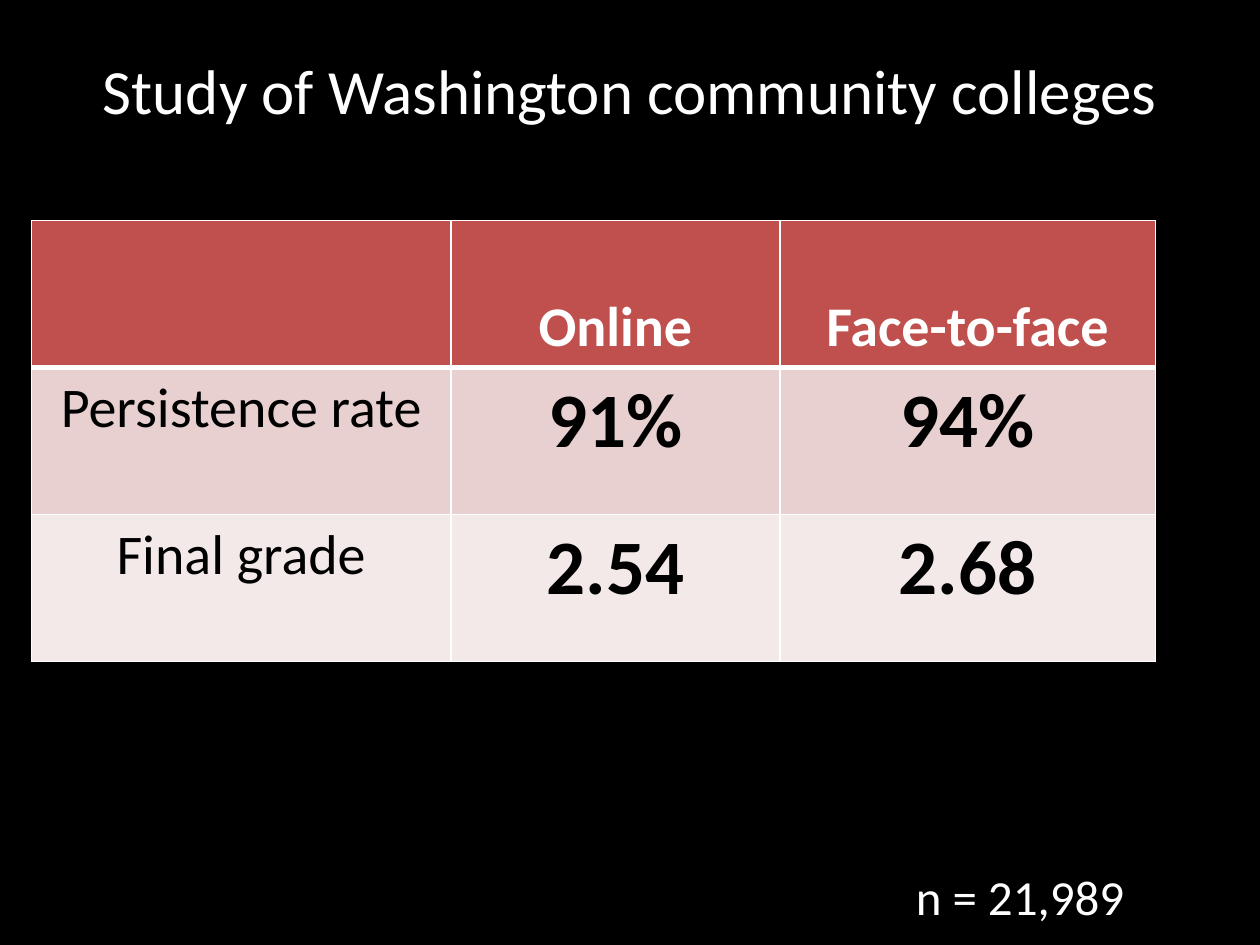
"""Build a slide comparing online and face-to-face community college results."""
from lxml.etree import SubElement
from pptx import Presentation
from pptx.dml.color import RGBColor
from pptx.enum.text import MSO_ANCHOR, PP_ALIGN
from pptx.oxml.ns import qn
from pptx.util import Inches, Pt

BLACK = RGBColor(0x00, 0x00, 0x00)
WHITE = RGBColor(0xFF, 0xFF, 0xFF)
RED = RGBColor(0xC0, 0x50, 0x4D)
ROSE = RGBColor(0xE8, 0xD0, 0xD0)
PALE_ROSE = RGBColor(0xF4, 0xE9, 0xE9)


def write_text(text_frame, text, size, color, bold=False, align=PP_ALIGN.CENTER):
    text_frame.text = text
    paragraph = text_frame.paragraphs[0]
    paragraph.alignment = align
    for font in [paragraph.font] + [run.font for run in paragraph.runs]:
        font.name = "Calibri"
        font.size = Pt(size)
        font.bold = bold
        font.color.rgb = color


def add_border(cell, side, width):
    properties = cell._tc.get_or_add_tcPr()
    line = SubElement(properties, qn(f"a:ln{side}"), w=str(Pt(width)))
    fill = SubElement(line, qn("a:solidFill"))
    SubElement(fill, qn("a:srgbClr"), val=str(WHITE))


presentation = Presentation()
presentation.slide_width = Inches(10)
presentation.slide_height = Inches(7.5)
slide = presentation.slides.add_slide(presentation.slide_layouts[6])
slide.background.fill.solid()
slide.background.fill.fore_color.rgb = BLACK

title = slide.shapes.add_textbox(Inches(0.5), Inches(0.08), Inches(9), Inches(1.25))
title.text_frame.word_wrap = True
title.text_frame.vertical_anchor = MSO_ANCHOR.MIDDLE
write_text(title.text_frame, "Study of Washington community colleges", 36, WHITE)

results = [
    ["", "Online", "Face-to-face"],
    ["Persistence rate", "91%", "94%"],
    ["Final grade", "2.54", "2.68"],
]
table = slide.shapes.add_table(
    3, 3, Inches(0.25), Inches(1.75), Inches(8.92), Inches(3.5)
).table
for column, width in zip(table.columns, [3.33, 2.61, 2.98]):
    column.width = Inches(width)

for row_index, (values, row_fill) in enumerate(zip(results, [RED, ROSE, PALE_ROSE])):
    is_header = row_index == 0
    for column_index, value in enumerate(values):
        cell = table.cell(row_index, column_index)
        is_label = column_index == 0
        write_text(
            cell.text_frame,
            value,
            32 if is_header or is_label else 44,
            WHITE if is_header else BLACK,
            bold=is_header or not is_label,
        )
        cell.vertical_anchor = MSO_ANCHOR.BOTTOM if is_header else MSO_ANCHOR.TOP
        add_border(cell, "L", 1)
        add_border(cell, "R", 1)
        add_border(cell, "T", 3 if row_index == 1 else 1)
        add_border(cell, "B", 3 if is_header else 1)
        cell.fill.solid()
        cell.fill.fore_color.rgb = row_fill

sample_size = slide.shapes.add_textbox(
    Inches(7.17), Inches(6.83), Inches(2.17), Inches(0.57)
)
sample_size.text_frame.word_wrap = True
write_text(sample_size.text_frame, "n = 21,989", 28, WHITE, align=PP_ALIGN.LEFT)

presentation.save("out.pptx")
